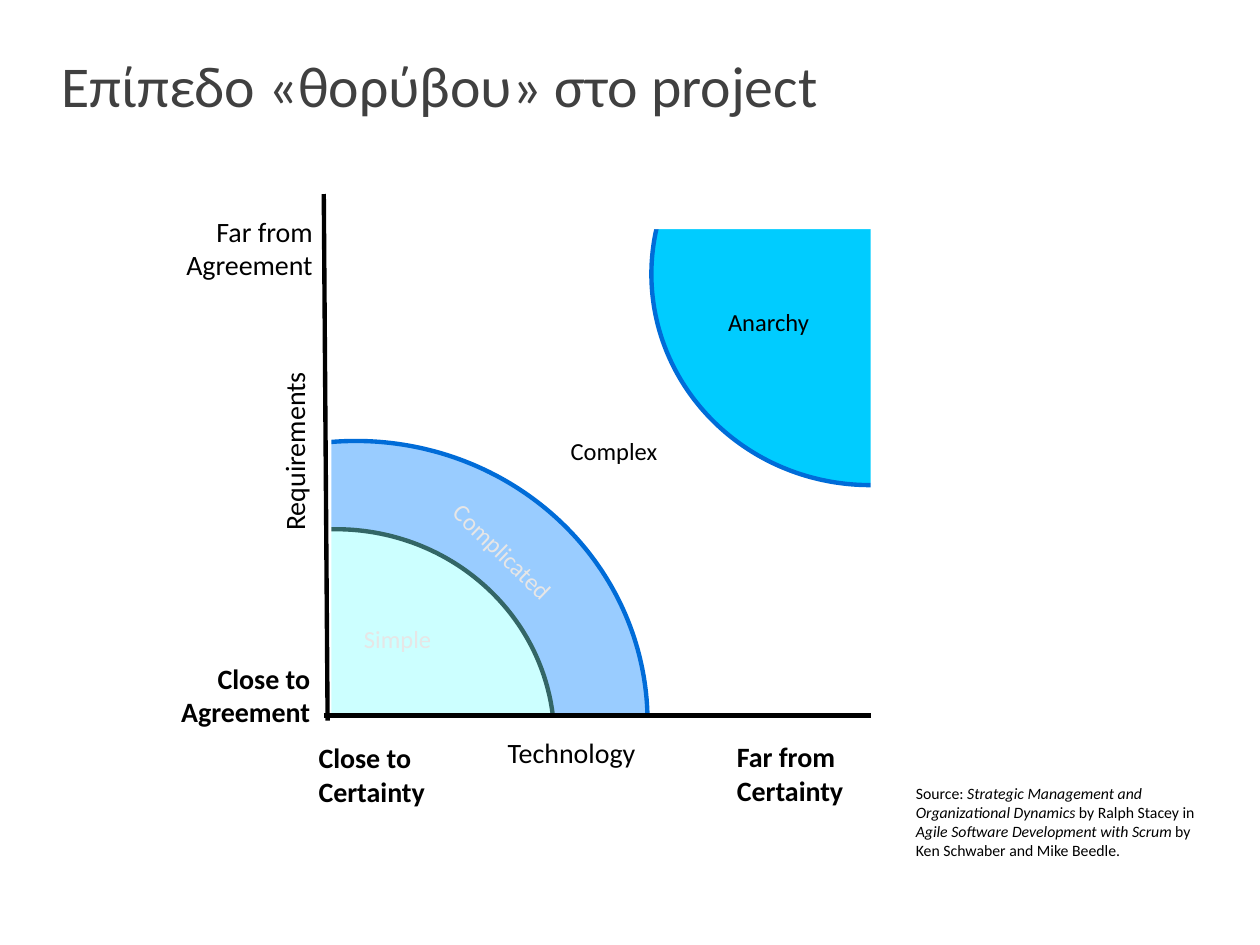
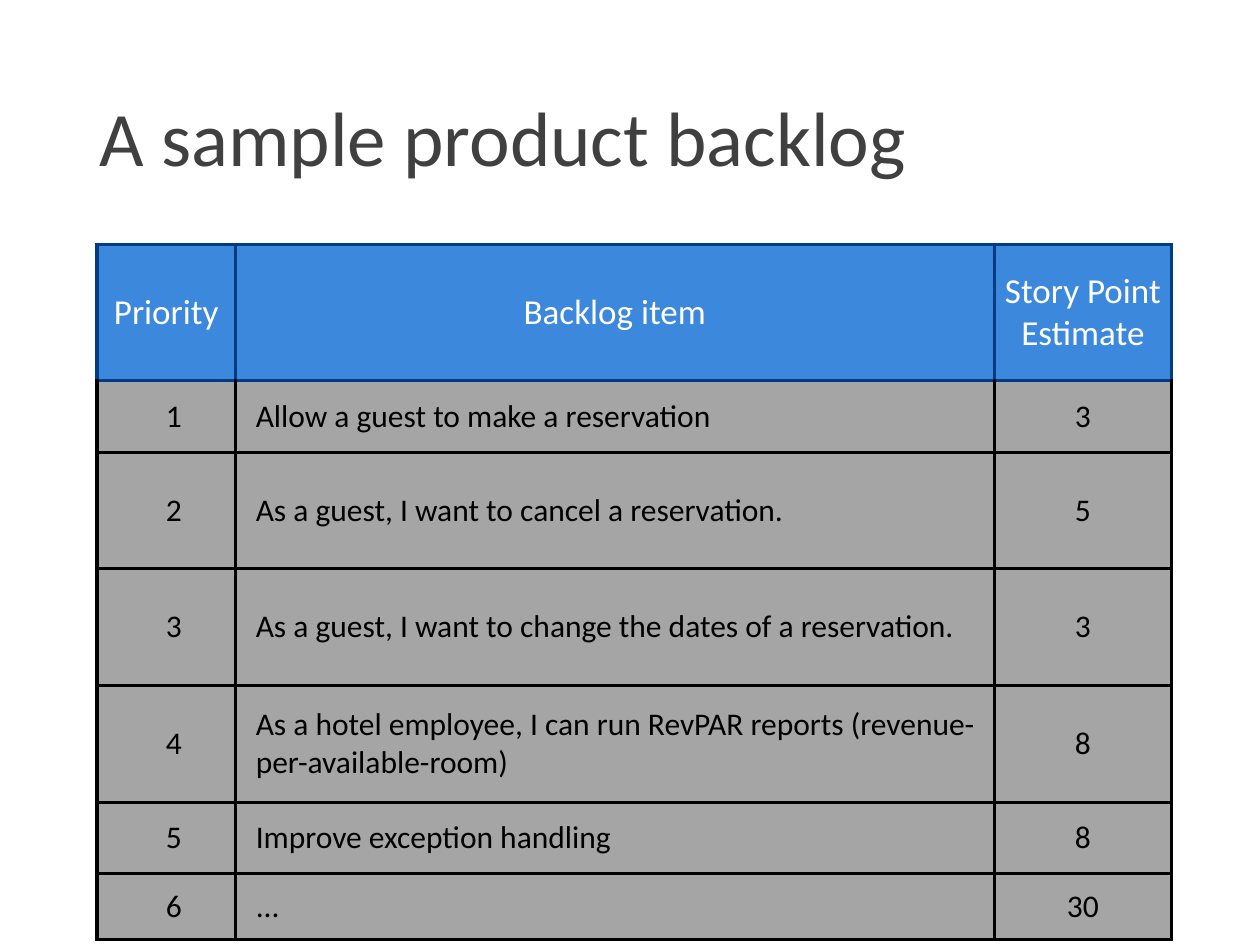
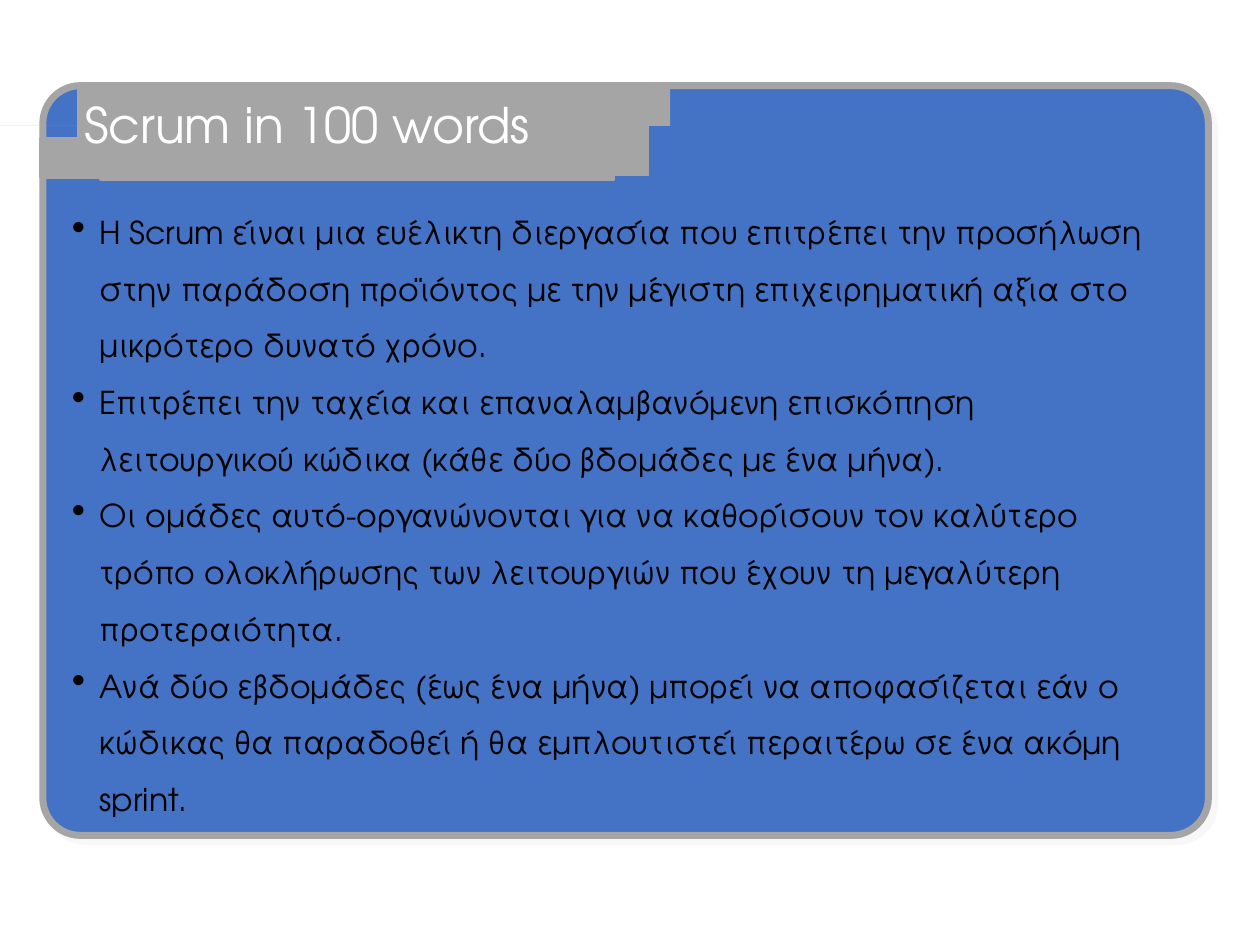
from lxml.etree import SubElement
from pptx import Presentation
from pptx.dml.color import RGBColor
from pptx.enum.shapes import MSO_CONNECTOR, MSO_SHAPE
from pptx.enum.text import MSO_ANCHOR, PP_ALIGN
from pptx.oxml.ns import qn
from pptx.util import Inches, Pt

COLORS = {
    "white": "FFFFFF", "black": "000000", "title": "404040", "pale": "E7E6E6",
    "simple": "CCFFFF", "simple_edge": "336666", "complicated": "99CCFF",
    "anarchy": "00CCFF", "edge": "006CD8", "header": "3C88DC",
    "header_edge": "003C83", "gray": "A5A5A5", "panel": "4472C4",
}
BODY_FONT, SCRUM_FONT = "Calibri", "TeX Gyre Adventor"
LEFT, CENTER, RIGHT = PP_ALIGN.LEFT, PP_ALIGN.CENTER, PP_ALIGN.RIGHT
TOP, MIDDLE = MSO_ANCHOR.TOP, MSO_ANCHOR.MIDDLE
OVAL, RECTANGLE = MSO_SHAPE.OVAL, MSO_SHAPE.RECTANGLE

NOISE_TITLE = "Επίπεδο «θορύβου» στο project"
LOWER_ZONES = [
    (OVAL, (0.51, 3.5, 4.63, 4.46), "complicated", "edge"),
    (OVAL, (0.93, 4.2, 3.47, 3.35), "simple", "simple_edge"),
    (RECTANGLE, (0.37, 5.68, 4.92, 2.34), "white", None),
    (RECTANGLE, (0.37, 3.08, 2.26, 2.89), "white", None),
]
UPPER_ZONES = [
    (OVAL, (5.17, 0.5, 3.47, 3.35), "anarchy", "edge"),
    (RECTANGLE, (4.6, 0.36, 4.92, 1.46), "white", None),
    (RECTANGLE, (6.91, 1.72, 2.6, 2.47), "white", None),
]
AXES = [((2.6, 5.72), (2.57, 1.54)), ((2.57, 5.68), (6.91, 5.68))]
ZONE_LABELS = [
    ("Simple", (2.79, 4.9, 1.59, 0.34), "pale", 0),
    ("Complicated", (3.26, 4.54, 2.14, 0.34), "pale", 44.1),
    ("Anarchy", (5.68, 2.39, 1.59, 0.52), "black", 0),
    ("Complex", (4.43, 3.41, 1.88, 0.52), "black", 0),
]
AXIS_LABELS = [
    (["Close to", "Certainty"], (2.43, 5.83, 1.74, 0.64), True, LEFT, 0),
    (["Far from", "Certainty"], (5.75, 5.82, 1.74, 0.64), True, LEFT, 0),
    (["Technology"], (3.93, 5.79, 2.99, 0.37), False, LEFT, 0),
    (["Close to", "Agreement"], (0.84, 5.2, 1.72, 0.64), True, RIGHT, 0),
    (["Far from", "Agreement"], (0.84, 1.65, 1.74, 0.64), False, RIGHT, 0),
    (["Requirements"], (0.83, 2.62, 3.01, 0.37), False, LEFT, 270),
]
SOURCE = [
    ("Source: ", False),
    ("Strategic Management and Organizational Dynamics ", True),
    ("by Ralph Stacey in ", False),
    ("Agile Software Development with Scrum ", True),
    ("by Ken Schwaber and Mike Beedle.", False),
]

BACKLOG_TITLE = "A sample product backlog"
BACKLOG = [
    ("Priority", "Backlog item", "Story Point Estimate"),
    ("1", "Allow a guest to make a reservation", "3"),
    ("2", "As a guest, I want to cancel a reservation.", "5"),
    ("3", "As a guest, I want to change the dates of a reservation.", "3"),
    ("4", "As a hotel employee, I can run RevPAR reports (revenue-per-available-room)", "8"),
    ("5", "Improve exception handling", "8"),
    ("6", "...", "30"),
]
COLUMN_WIDTHS = [1.1, 6.02, 1.41]
ROW_HEIGHTS = [1.08, 0.57, 0.92, 0.93, 0.93, 0.56, 0.53]

SCRUM_TITLE = "Scrum in 100 words"
SCRUM_POINTS = [
    "Η Scrum είναι μια ευέλικτη διεργασία που επιτρέπει την προσήλωση στην παράδοση προϊόντος με την μέγιστη επιχειρηματική αξία στο μικρότερο δυνατό χρόνο.",
    "Επιτρέπει την ταχεία και επαναλαμβανόμενη επισκόπηση λειτουργικού κώδικα (κάθε δύο βδομάδες με ένα μήνα).",
    "Οι ομάδες αυτό-οργανώνονται για να καθορίσουν τον καλύτερο τρόπο ολοκλήρωσης των λειτουργιών που έχουν τη μεγαλύτερη προτεραιότητα.",
    "Ανά δύο εβδομάδες (έως ένα μήνα) μπορεί να αποφασίζεται εάν ο κώδικας θα παραδοθεί ή θα εμπλουτιστεί περαιτέρω σε ένα ακόμη sprint.",
]
TAB_PARTS = [
    ((0.8, 0.69, 4.07, 0.73), 2),
    ((0.32, 1.1, 0.57, 0.31), 2),
    ((4.75, 0.68, 0.57, 0.32), 0),
]
TAB_CORNERS = [(5.32, 1.41, -1), (0.32, 0.66, 1)]
CORNER_CURVE = [(0.31, 0), (0.1, 0.01), (0, 0.13), (0, 0.29)]
CORNER_BLOCK = [(0, 0.45), (0.49, 0.45), (0.49, 0)]


def color(name):
    return RGBColor.from_string(COLORS[name])


def inches(values):
    return [Inches(value) for value in values]


def write(frame, paragraphs, size=18, font=BODY_FONT, ink="black", bold=False,
          align=LEFT, anchor=TOP, spacing=None, indent=0, bullet=None, insets=None):
    frame.word_wrap = True
    frame.vertical_anchor = anchor
    if insets is not None:
        frame.margin_left = frame.margin_right = Inches(insets)
        frame.margin_top = frame.margin_bottom = Inches(insets)
    for index, runs in enumerate(paragraphs):
        paragraph = frame.add_paragraph() if index else frame.paragraphs[0]
        paragraph.alignment = align
        if spacing:
            paragraph.line_spacing = spacing
        properties = paragraph._p.get_or_add_pPr()
        if indent:
            properties.set("marL", str(Inches(indent)))
        if bullet:
            properties.set("indent", str(-Inches(indent)))
            SubElement(properties, qn("a:buSzPct"), val="125000")
            SubElement(properties, qn("a:buChar"), char=bullet)
        for text, italic in [(runs, False)] if isinstance(runs, str) else runs:
            run = paragraph.add_run()
            run.text = text
            run.font.name, run.font.size = font, Pt(size)
            run.font.bold, run.font.italic = bold, italic
            run.font.color.rgb = color(ink)


def add_text(slide, paragraphs, box, rotation=0, **text_format):
    shape = slide.shapes.add_textbox(*inches(box))
    shape.rotation = rotation
    write(shape.text_frame, paragraphs, **text_format)


def paint(shape, fill, edge=None, width=2.5):
    shape.shadow.inherit = False
    shape.fill.solid()
    shape.fill.fore_color.rgb = color(fill)
    if edge and width:
        shape.line.color.rgb = color(edge)
        shape.line.width = Pt(width)
    else:
        shape.line.fill.background()


def add_shape(slide, kind, box, fill, edge=None, width=2.5):
    shape = slide.shapes.add_shape(kind, *inches(box))
    paint(shape, fill, edge, width)
    return shape


def add_title(slide, text, box, size):
    add_text(slide, [text], box, size=size, ink="title", anchor=MIDDLE, spacing=0.9)


def build_noise(slide):
    for zone in LOWER_ZONES:
        add_shape(slide, *zone)
    for start, end in AXES:
        axis = slide.shapes.add_connector(MSO_CONNECTOR.STRAIGHT, *inches(start + end))
        axis.line.color.rgb = color("black")
        axis.line.width = Pt(2.5)
        SubElement(axis._element.spPr, qn("a:effectLst"))
    for zone in UPPER_ZONES:
        add_shape(slide, *zone)
    for text, box, ink, rotation in ZONE_LABELS:
        add_text(slide, [text], box, rotation, size=14, ink=ink)
    for lines, box, bold, align, rotation in AXIS_LABELS:
        add_text(slide, lines, box, rotation, size=16, bold=bold, align=align)
    add_text(slide, [SOURCE], (7.17, 6.17, 2.58, 0.7), size=9)
    add_title(slide, NOISE_TITLE, (0.39, 0.08, 9, 1.25), 33)


def set_borders(cell, edges):
    properties = cell._tc.get_or_add_tcPr()
    for side, edge in zip("LRTB", edges):
        line = SubElement(properties, qn("a:ln" + side), w=str(Pt(2)))
        fill = SubElement(line, qn("a:solidFill"))
        SubElement(fill, qn("a:srgbClr"), val=COLORS[edge])


def build_backlog(slide):
    add_title(slide, BACKLOG_TITLE, (0.69, 0.4, 8.62, 1.45), 44)
    box = (0.77, 1.94, sum(COLUMN_WIDTHS), sum(ROW_HEIGHTS))
    table = slide.shapes.add_table(len(BACKLOG), len(COLUMN_WIDTHS), *inches(box)).table
    table.first_row = table.horz_banding = False
    for column, width in zip(table.columns, COLUMN_WIDTHS):
        column.width = Inches(width)
    for row, height in zip(table.rows, ROW_HEIGHTS):
        row.height = Inches(height)
    for row, texts in enumerate(BACKLOG):
        header = row == 0
        edge = "header_edge" if header else "black"
        top = "header_edge" if row < 2 else "black"
        for column, text in enumerate(texts):
            cell = table.cell(row, column)
            set_borders(cell, (edge, edge, top, edge))
            cell.fill.solid()
            cell.fill.fore_color.rgb = color("header" if header else "gray")
            cell.margin_left = cell.margin_right = Inches(0.04)
            cell.margin_top = cell.margin_bottom = Inches(0.04)
            cell.vertical_anchor = MIDDLE
            write(cell.text_frame, [text], size=20 if header else 18,
                  ink="white" if header else "black",
                  align=LEFT if column == 1 and not header else CENTER,
                  indent=0 if header or column == 2 else 0.12)


def bezier(points, share):
    while len(points) > 1:
        points = [tuple(a + (b - a) * share for a, b in zip(start, end))
                  for start, end in zip(points, points[1:])]
    return points[0]


def add_corner(slide, x, y, direction):
    outline = [bezier(CORNER_CURVE, step / 12) for step in range(13)] + CORNER_BLOCK
    points = [(x + direction * across, y + direction * down) for across, down in outline]
    builder = slide.shapes.build_freeform(*points[0], scale=Inches(1))
    builder.add_line_segments(points[1:], close=True)
    paint(builder.convert_to_shape(), "gray")


def add_shadow(shape):
    effects = shape._element.spPr.find(qn("a:effectLst"))
    shadow = SubElement(effects, qn("a:outerShdw"), blurRad="0", dist=str(Pt(5)),
                        dir="2700000", algn="ctr", rotWithShape="0")
    tone = SubElement(shadow, qn("a:srgbClr"), val=COLORS["pale"])
    SubElement(tone, qn("a:alpha"), val="30000")


def build_scrum(slide):
    panel = add_shape(slide, MSO_SHAPE.ROUNDED_RECTANGLE, (0.34, 0.68, 9.25, 5.95),
                      "panel", "gray", 4)
    panel.adjustments[0] = 0.05
    add_shadow(panel)
    add_text(slide, SCRUM_POINTS, (0.57, 1.64, 8.78, 4.75), font=SCRUM_FONT,
             anchor=MIDDLE, spacing=1.5, indent=0.22, bullet="•", insets=0)
    for box, width in TAB_PARTS:
        add_shape(slide, RECTANGLE, box, "gray", "gray", width)
    for corner in TAB_CORNERS:
        add_corner(slide, *corner)
    heading = add_shape(slide, RECTANGLE, (0.62, 0.7, 4.53, 0.69), "gray", "gray", 0.75)
    write(heading.text_frame, [SCRUM_TITLE], size=28, font=SCRUM_FONT, ink="white",
          insets=0.05)


def main():
    presentation = Presentation()
    presentation.slide_width, presentation.slide_height = Inches(10), Inches(7.5)
    for build in (build_noise, build_backlog, build_scrum):
        build(presentation.slides.add_slide(presentation.slide_layouts[6]))
    presentation.save("out.pptx")


if __name__ == "__main__":
    main()
